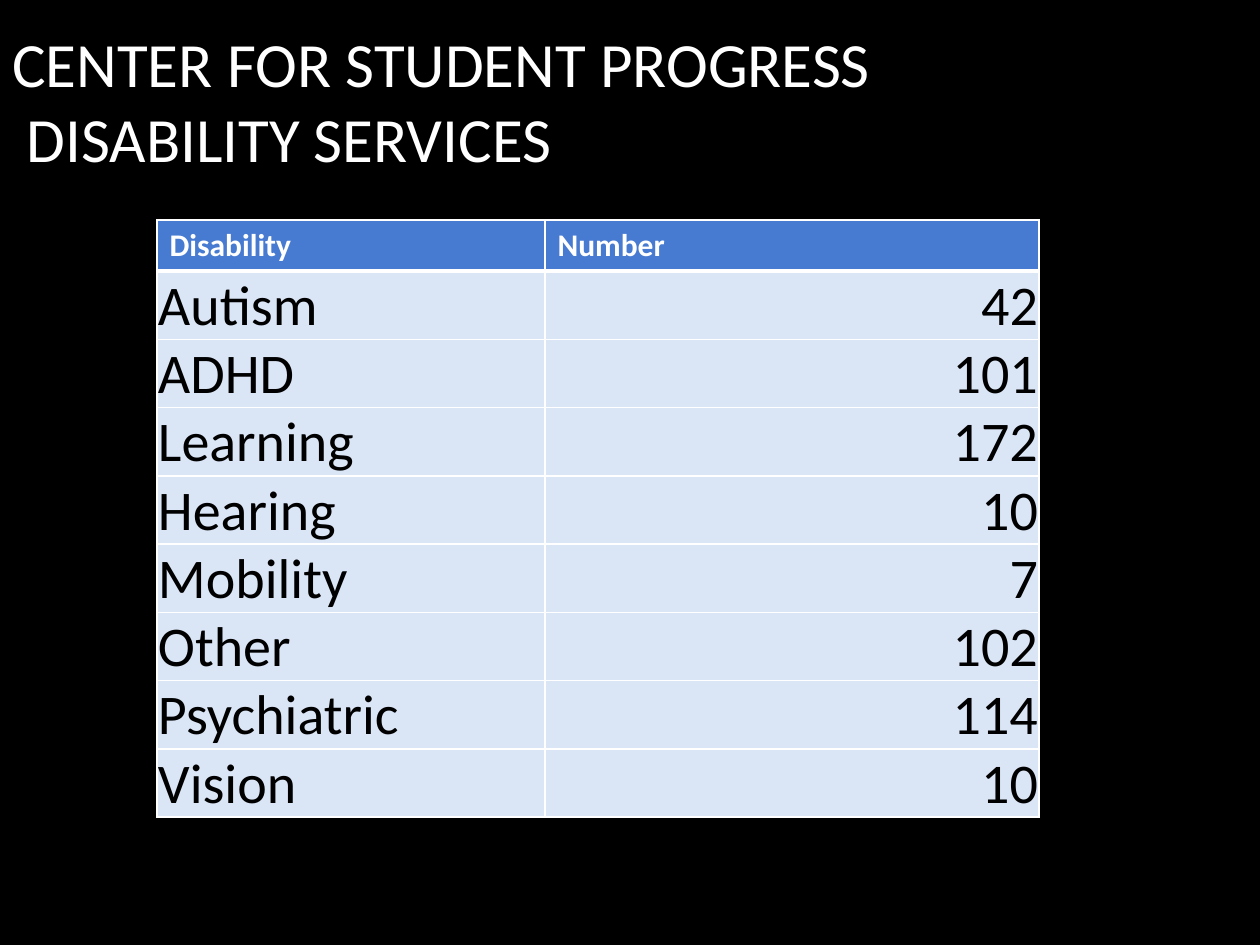
from dataclasses import dataclass

from lxml.etree import SubElement
from pptx import Presentation
from pptx.dml.color import RGBColor as RGB
from pptx.enum.text import MSO_ANCHOR as Anchor, PP_ALIGN as Align
from pptx.oxml.ns import qn
from pptx.util import Pt

PX = 914400 // 126
FONT = "Calibri"
COLORS = {
    "back": "000000",
    "title": "FFFFFF",
    "line": "FFFFFF",
    "head": "477BD1",
    "body": "DAE5F6",
    "ink": "000000",
}


@dataclass
class Look:
    size: int
    color: str
    fill: str = ""
    bold: bool = False
    base: int = 1


@dataclass
class Count:
    name: str
    total: int


TITLE = Look(36, "title")
HEAD = Look(18, "title", "head", True, 3)
BODY = Look(32, "ink", "body")
COUNTS = [
    Count("Autism", 42),
    Count("ADHD", 101),
    Count("Learning", 172),
    Count("Hearing", 10),
    Count("Mobility", 7),
    Count("Other", 102),
    Count("Psychiatric", 114),
    Count("Vision", 10),
]


def color(name: str) -> RGB:
    return RGB.from_string(COLORS[name])


def write(frame, text: str, look: Look, align=Align.LEFT) -> None:
    frame.text = text
    para = frame.paragraphs[0]
    para.alignment = align
    for run in para.runs:
        run.font.name = FONT
        run.font.size = Pt(look.size)
        run.font.bold = look.bold
        run.font.color.rgb = color(look.color)


def edge(cell, side: str, width: int) -> None:
    props = cell._tc.get_or_add_tcPr()
    line = SubElement(props, qn(f"a:ln{side}"), w=str(Pt(width)))
    fill = SubElement(line, qn("a:solidFill"))
    SubElement(fill, qn("a:srgbClr"), val=COLORS["line"])


def draw_cell(cell, text: str, look: Look, align=Align.LEFT) -> None:
    for side in "LRT":
        edge(cell, side, 1)
    edge(cell, "B", look.base)
    cell.fill.solid()
    cell.fill.fore_color.rgb = color(look.fill)
    write(cell.text_frame, text, look, align)


def draw_count(row, count: Count) -> None:
    draw_cell(row.cells[0], count.name, BODY)
    draw_cell(row.cells[1], str(count.total), BODY, Align.RIGHT)
    for cell in row.cells:
        cell.vertical_anchor = Anchor.BOTTOM
        cell.margin_left = cell.margin_right = cell.margin_top = PX
        cell.margin_bottom = 0


def draw_title(slide) -> None:
    box = slide.shapes.add_textbox(0, 0, 1071 * PX, 200 * PX)
    frame = box.text_frame
    frame.word_wrap = True
    frame.vertical_anchor = Anchor.MIDDLE
    write(frame, "CENTER FOR STUDENT PROGRESS\v DISABILITY SERVICES", TITLE)


def draw_table(slide) -> None:
    shape = slide.shapes.add_table(
        len(COUNTS) + 1, 2, 157 * PX, 220 * PX, 882 * PX, 600 * PX
    )
    table = shape.table
    table.horz_banding = False
    for col, width in zip(table.columns, (388, 494)):
        col.width = width * PX
    for row in table.rows:
        row.height = 51 * PX
    shape.height = 600 * PX
    head, *rows = table.rows
    for cell, text in zip(head.cells, ("Disability", "Number")):
        draw_cell(cell, text, HEAD)
    for row, count in zip(rows, COUNTS):
        draw_count(row, count)


def main() -> None:
    deck = Presentation()
    deck.slide_width = 1260 * PX
    deck.slide_height = 945 * PX
    slide = deck.slides.add_slide(deck.slide_layouts[6])
    slide.background.fill.solid()
    slide.background.fill.fore_color.rgb = color("back")
    draw_title(slide)
    draw_table(slide)
    deck.save("out.pptx")


if __name__ == "__main__":
    main()
